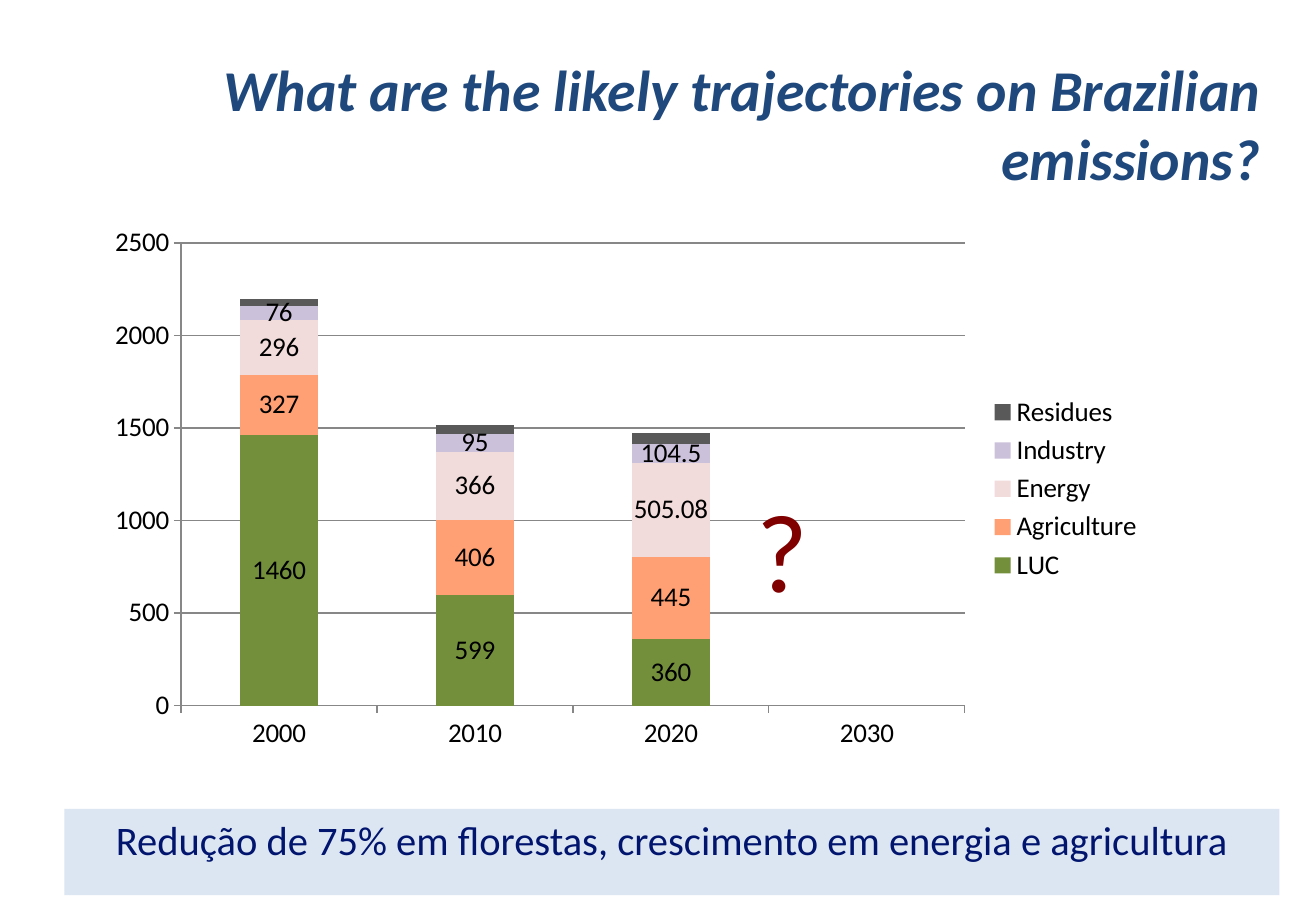
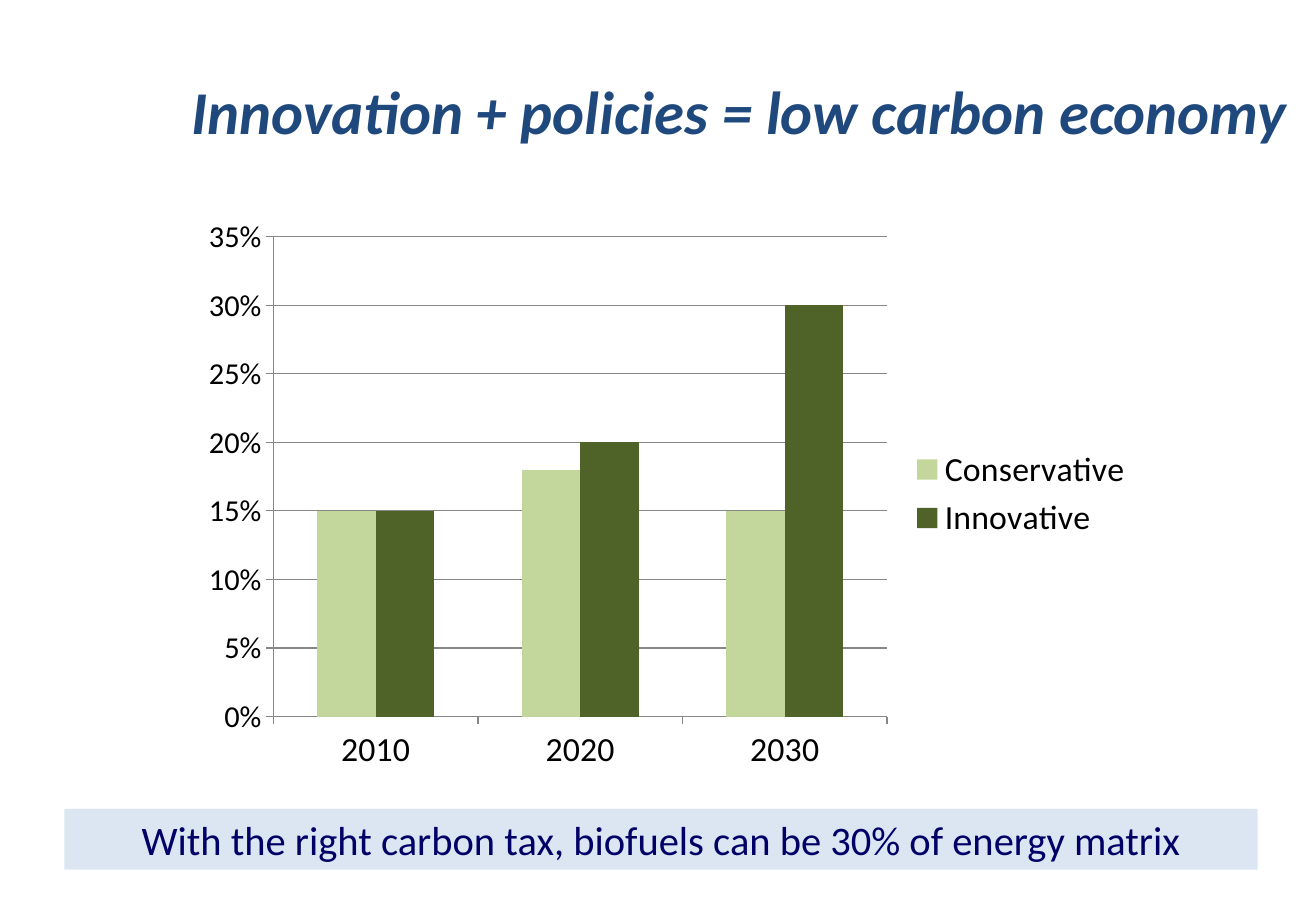
from lxml import etree
from pptx import Presentation
from pptx.chart.data import CategoryChartData
from pptx.dml.color import RGBColor
from pptx.enum.chart import XL_CHART_TYPE, XL_LEGEND_POSITION, XL_TICK_MARK
from pptx.enum.shapes import MSO_SHAPE
from pptx.enum.text import MSO_ANCHOR, PP_ALIGN
from pptx.oxml import parse_xml
from pptx.oxml.ns import nsdecls, qn
from pptx.util import Inches, Pt

STACKED = XL_CHART_TYPE.COLUMN_STACKED
CLUSTER = XL_CHART_TYPE.COLUMN_CLUSTERED
RIGHT, CENTER, LEFT = PP_ALIGN.RIGHT, PP_ALIGN.CENTER, PP_ALIGN.LEFT
TOP, MIDDLE = MSO_ANCHOR.TOP, MSO_ANCHOR.MIDDLE
OUTSIDE = XL_TICK_MARK.OUTSIDE
LEGEND = XL_LEGEND_POSITION.RIGHT
RECT = MSO_SHAPE.RECTANGLE

FONT = "Calibri"
COLORS = {
    "title": "1F497D", "band": "DCE6F2", "navy": "01146E", "blue": "000066",
    "text": "000000", "mark": "800000", "grid": "878787",
    "luc": "738F3B", "farm": "FFA074", "energy": "F2DCDB",
    "plant": "CCC1DA", "waste": "595959",
    "pale": "C3D69B", "deep": "4F6228",
}


def color(name):
    return RGBColor.from_string(COLORS[name])


class Deck:
    def __init__(self, width, height):
        self.prs = Presentation()
        self.prs.slide_width = Inches(width)
        self.prs.slide_height = Inches(height)
        self.slide = None

    def page(self):
        self.slide = self.prs.slides.add_slide(self.prs.slide_layouts[6])

    def style(self, font, size, name="text"):
        font.name = FONT
        font.size = Pt(size)
        font.color.rgb = color(name)

    def label(self, shape, text, size, name, align, anchor=TOP):
        frame = shape.text_frame
        frame.word_wrap = True
        frame.vertical_anchor = anchor
        frame.text = text
        line = frame.paragraphs[0]
        line.alignment = align
        run = line.runs[0]
        self.style(run.font, size, name)
        return run

    def text(self, box, *words):
        shape = self.slide.shapes.add_textbox(*map(Inches, box))
        return self.label(shape, *words)

    def title(self, box, text, size):
        run = self.text(box, text, size, "title", RIGHT, MIDDLE)
        run.font.bold = run.font.italic = True

    def band(self, width, height, text, name):
        box = (0.53, 6.66, width, height)
        shape = self.slide.shapes.add_shape(RECT, *map(Inches, box))
        shape.shadow.inherit = False
        shape.fill.solid()
        shape.fill.fore_color.rgb = color("band")
        shape.line.fill.background()
        self.label(shape, text, 24, name, CENTER)

    def mark(self, box, text):
        run = self.text(box, text, 66, "mark", LEFT)
        # Soft shadow behind the letter
        glow = parse_xml(
            f'<a:effectLst {nsdecls("a")}><a:outerShdw blurRad="38100" '
            'dist="38100" dir="2700000" algn="tl"><a:srgbClr val="000000">'
            '<a:alpha val="43000"/></a:srgbClr></a:outerShdw></a:effectLst>')
        run._r.rPr.find(qn("a:solidFill")).addnext(glow)

    def place(self, chart, box, plot):
        """Fix the inner plot area, given in slide inches."""
        left, top, width, height = box
        parts = {"x": (plot[0] - left) / width, "y": (plot[1] - top) / height,
                 "w": plot[2] / width, "h": plot[3] / height}
        area = chart.element.find(".//" + qn("c:plotArea"))
        for old in area.findall(qn("c:layout")):
            area.remove(old)
        layout = etree.Element(qn("c:layout"))
        area.insert(0, layout)
        inner = etree.SubElement(layout, qn("c:manualLayout"))
        rows = [("layoutTarget", "inner"), ("xMode", "edge"), ("yMode", "edge")]
        rows += [(key, f"{part:.4f}") for key, part in parts.items()]
        for key, val in rows:
            etree.SubElement(inner, qn("c:" + key)).set("val", val)

    def axis(self, axis, size):
        axis.major_tick_mark = OUTSIDE
        axis.format.line.color.rgb = color("grid")
        axis.format.line.width = Pt(0.75)
        self.style(axis.tick_labels.font, size)

    def chart(self, kind, box, plot, cats, rows, sizes, scale, form, lap):
        data = CategoryChartData(number_format=form)
        data.categories = cats
        for name, vals, *_ in rows:
            data.add_series(name, vals)
        chart = self.slide.shapes.add_chart(
            kind, *map(Inches, box), data).chart
        chart.has_title = False
        self.style(chart.font, 10)
        self.place(chart, box, plot)

        # Axes and legend
        cat, val, key = sizes
        self.axis(chart.category_axis, cat)
        axis = chart.value_axis
        self.axis(axis, val)
        axis.minimum_scale = 0
        axis.maximum_scale, axis.major_unit = scale
        axis.tick_labels.number_format = form
        axis.tick_labels.number_format_is_linked = False
        axis.has_major_gridlines = True
        axis.major_gridlines.format.line.color.rgb = color("grid")
        axis.major_gridlines.format.line.width = Pt(0.75)
        chart.has_legend = True
        chart.legend.position = LEGEND
        chart.legend.include_in_layout = False
        self.style(chart.legend.font, key)

        # Columns
        bars = chart.plots[0]
        bars.gap_width = 150
        bars.overlap = lap
        bars.vary_by_categories = False
        for series, (_, _, name, shown) in zip(bars.series, rows):
            series.format.fill.solid()
            series.format.fill.fore_color.rgb = color(name)
            series.invert_if_negative = False
            if shown:
                series.data_labels.show_value = True
                self.style(series.data_labels.font, 16)


def main():
    deck = Deck(10.83, 7.5)

    # Emission paths
    deck.page()
    deck.title((0.22, 0.6, 10.25, 0.83),
               "What are the likely trajectories on Brazilian emissions?", 34.2)
    deck.chart(STACKED, (0.77, 1.78, 8.74, 4.49), (1.49, 2, 6.45, 3.81),
               ["2000", "2010", "2020", "2030"],
               [("LUC", (1460, 599, 360, None), "luc", True),
                ("Agriculture", (327, 406, 445, None), "farm", True),
                ("Energy", (296, 366, 505.08, None), "energy", True),
                ("Industry", (76, 95, 104.5, None), "plant", True),
                ("Residues", (40, 50, 60, None), "waste", False)],
               (16, 16, 16), (2500, 500), "General", 100)
    deck.mark((6.13, 3.91, 0.63, 1.21), "?")
    deck.band(10, 0.71, "Redução de 75% em florestas, "
              "crescimento em energia e agricultura", "navy")

    # Biofuel share
    deck.page()
    deck.title((0.61, 0.36, 10.08, 1.1),
               "Innovation + policies = low carbon economy", 36)
    deck.chart(CLUSTER, (1.56, 1.7, 7.87, 4.73), (2.25, 1.95, 5.05, 3.95),
               ["2010", "2020", "2030"],
               [("Conservative", (0.15, 0.18, 0.15), "pale", False),
                ("Innovative", (0.15, 0.2, 0.3), "deep", False)],
               (20, 18, 20), (0.35, 0.05), "0%", 0)
    deck.band(9.82, 0.5, "With the right carbon tax, "
              "biofuels can be 30% of energy matrix", "blue")

    deck.prs.save("out.pptx")


if __name__ == "__main__":
    main()
